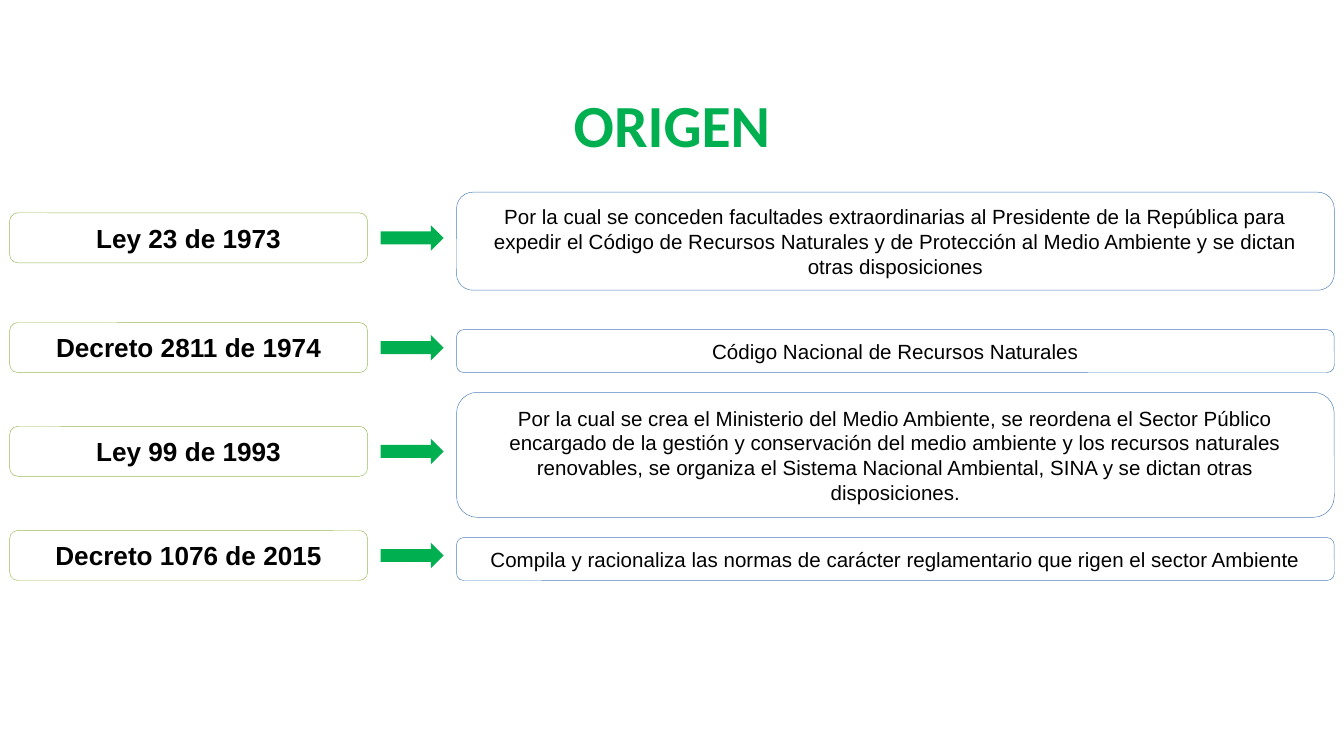
import dataclasses

import pptx
import pptx.dml.color
import pptx.enum.shapes
import pptx.enum.text
import pptx.util

Pt = pptx.util.Pt
Shape = pptx.enum.shapes.MSO_SHAPE


@dataclasses.dataclass(frozen=True)
class Theme:
    green: str = "00B050"
    olive: str = "9BBB59"
    blue: str = "4F81BD"
    white: str = "FFFFFF"
    black: str = "000000"
    title_font: str = "Calibri"
    body_font: str = "Arial"
    title_size: float = 32
    label_size: float = 14
    description_size: float = 11
    outline: float = 0.25


def rgb(value):
    return pptx.dml.color.RGBColor.from_string(value)


class SlideBuilder:
    def __init__(self, slide, theme):
        self.slide = slide
        self.theme = theme

    def add_text(self, shape, text, font, size, color, bold):
        frame = shape.text_frame
        frame.word_wrap = True
        frame.vertical_anchor = pptx.enum.text.MSO_ANCHOR.MIDDLE
        para = frame.paragraphs[0]
        para.alignment = pptx.enum.text.PP_ALIGN.CENTER
        span = para.add_run()
        span.text = text
        span.font.name = font
        span.font.size = Pt(size)
        span.font.bold = bold
        span.font.color.rgb = rgb(color)

    def title(self, text, left, top, width, height):
        title = self.slide.shapes.title
        title.left, title.top = Pt(left), Pt(top)
        title.width, title.height = Pt(width), Pt(height)
        self.add_text(title, text, self.theme.title_font,
                      self.theme.title_size, self.theme.green, True)

    def shape(self, kind, left, top, width, height, fill):
        shape = self.slide.shapes.add_shape(
            kind, Pt(left), Pt(top), Pt(width), Pt(height))
        shape.shadow.inherit = False
        shape.fill.solid()
        shape.fill.fore_color.rgb = rgb(fill)
        return shape

    def box(self, text, left, top, width, height, outline, size, bold=False):
        box = self.shape(Shape.ROUNDED_RECTANGLE, left, top, width, height,
                         self.theme.white)
        box.line.color.rgb = rgb(outline)
        box.line.width = Pt(self.theme.outline)
        self.add_text(box, text, self.theme.body_font, size,
                      self.theme.black, bold)
        box.text_frame.auto_size = pptx.enum.text.MSO_AUTO_SIZE.SHAPE_TO_FIT_TEXT

    def arrow(self, left, top, width, height):
        arrow = self.shape(Shape.RIGHT_ARROW, left, top, width, height,
                           self.theme.green)
        arrow.line.fill.background()


# Label, label top, description, description top, description height
LAWS = [
    ("Ley 23 de 1973", 114,
     "Por la cual se conceden facultades extraordinarias al Presidente de la "
     "República para expedir el Código de Recursos Naturales y de Protección "
     "al Medio Ambiente y se dictan otras disposiciones", 103, 52.5),
    ("Decreto 2811 de 1974", 172.8,
     "Código Nacional de Recursos Naturales", 176.6, 23),
    ("Ley 99 de 1993", 228.4,
     "Por la cual se crea el Ministerio del Medio Ambiente, se reordena el "
     "Sector Público encargado de la gestión y conservación del medio "
     "ambiente y los recursos naturales renovables, se organiza el Sistema "
     "Nacional Ambiental, SINA y se dictan otras disposiciones.", 210.2, 67),
    ("Decreto 1076 de 2015", 284.2,
     "Compila y racionaliza las normas de carácter reglamentario que rigen "
     "el sector Ambiente", 288, 23),
]


def main():
    theme = Theme()
    deck = pptx.Presentation()
    deck.slide_width, deck.slide_height = Pt(720), Pt(405)
    page = SlideBuilder(deck.slides.add_slide(deck.slide_layouts[5]), theme)
    page.title("ORIGEN", 36, 32.4, 648, 67.6)

    for label, label_top, description, top, height in LAWS:
        page.box(label, 5.2, label_top, 191.8, 26.8, theme.olive,
                 theme.label_size, bold=True)
        page.box(description, 244.6, top, 470.2, height, theme.blue,
                 theme.description_size)
        page.arrow(203.9, label_top + 6.6, 33.8, 13.7)

    deck.save("out.pptx")


if __name__ == "__main__":
    main()
